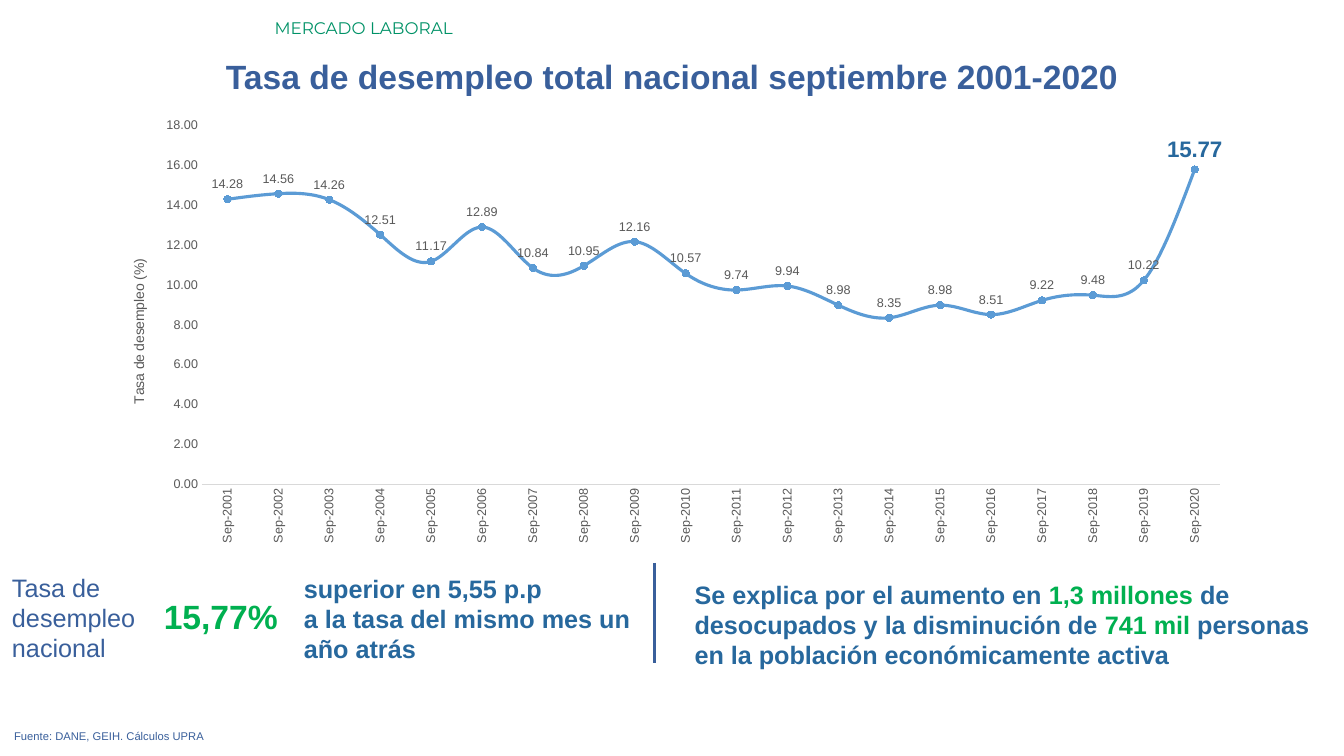
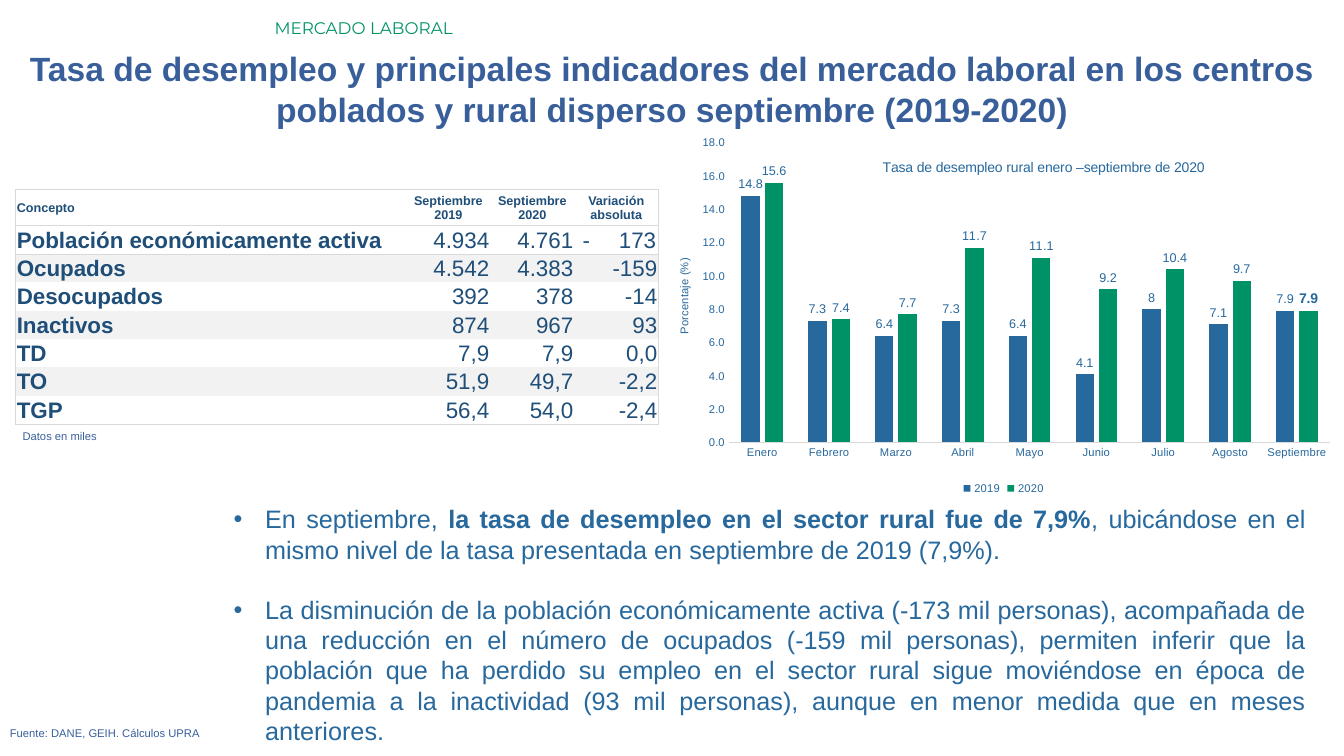
from dataclasses import dataclass
from typing import Optional, Sequence

from lxml.etree import SubElement
from pptx import Presentation
from pptx.chart.data import CategoryChartData
from pptx.dml.color import RGBColor
from pptx.enum.chart import (XL_CHART_TYPE, XL_LABEL_POSITION, XL_LEGEND_POSITION,
                             XL_MARKER_STYLE, XL_TICK_MARK)
from pptx.enum.shapes import MSO_CONNECTOR
from pptx.enum.text import MSO_ANCHOR, MSO_AUTO_SIZE, PP_ALIGN
from pptx.oxml.ns import qn
from pptx.util import Pt

EMU_PER_PX = 9525


def px(length: int) -> int:
    return length * EMU_PER_PX


@dataclass(frozen=True)
class Theme:
    font: str = "Arial"
    kicker_font: str = "Montserrat"
    navy: str = "395F9B"
    blue: str = "27689D"
    line_blue: str = "5B9BD5"
    table_blue: str = "1F4E78"
    teal: str = "009267"
    green: str = "00B050"
    gray: str = "595959"
    rule: str = "D9D9D9"
    stripe: str = "F2F2F2"
    white: str = "FFFFFF"
    title: int = 24
    body: int = 18
    cell: int = 16
    kicker: int = 12
    axis_title: int = 10
    label: int = 9
    small: int = 8


THEME = Theme()


@dataclass(frozen=True)
class Box:
    left: int
    top: int
    width: int
    height: int

    def emu(self) -> tuple:
        return tuple(px(side) for side in (self.left, self.top, self.width, self.height))


@dataclass(frozen=True)
class Span:
    """A piece of a paragraph; what is None follows the paragraph."""
    text: str
    color: Optional[str] = None
    bold: Optional[bool] = None


@dataclass(frozen=True)
class AxisTitle:
    text: str
    size: int
    position: tuple


@dataclass(frozen=True)
class ChartStyle:
    kind: XL_CHART_TYPE
    box: Box
    plot: tuple
    color: str
    value_format: str
    category_size: int
    axis_title: AxisTitle


def rgb(color: str) -> RGBColor:
    return RGBColor.from_string(color)


def style_font(font, size: int, color: str, bold: bool = False, name: str = THEME.font) -> None:
    font.name, font.size, font.bold = name, Pt(size), bold
    font.color.rgb = rgb(color)


def add_text(frame, text, *, size: int, color: str, bold: bool = False, name: str = THEME.font,
             align: PP_ALIGN = PP_ALIGN.LEFT, space_before: float = 0,
             bullet_indent: int = 0, tabs: Sequence = ()) -> None:
    """Add one paragraph, from a string or a list of spans, to a text frame."""
    first = frame.paragraphs[0]
    paragraph = frame.add_paragraph() if first.runs else first
    paragraph.alignment = align
    if space_before:
        paragraph.space_before = Pt(space_before)
    properties = paragraph._p.get_or_add_pPr()
    if bullet_indent:
        properties.set("marL", str(px(bullet_indent)))
        properties.set("indent", str(-px(bullet_indent)))
        SubElement(properties, qn("a:buFont"), typeface=THEME.font)
        SubElement(properties, qn("a:buChar"), char="•")
    if tabs:
        tab_list = SubElement(properties, qn("a:tabLst"))
        for position, side in tabs:
            SubElement(tab_list, qn("a:tab"), pos=str(px(position)), algn=side)
    for span in [Span(text)] if isinstance(text, str) else text:
        run = paragraph.add_run()
        run.text = span.text
        style_font(run.font, size, span.color or color,
                   bold if span.bold is None else span.bold, name)


def fit_frame(frame) -> None:
    frame.word_wrap = True
    frame.auto_size = MSO_AUTO_SIZE.SHAPE_TO_FIT_TEXT
    frame.vertical_anchor = MSO_ANCHOR.TOP


def add_box(slide, box: Box, *paragraphs, **text_format) -> None:
    frame = slide.shapes.add_textbox(*box.emu()).text_frame
    fit_frame(frame)
    for text in paragraphs:
        add_text(frame, text, **text_format)


def add_slide(presentation, title: str, title_box: Box, source_box: Box):
    """Add a slide with its section name, title and source line."""
    slide = presentation.slides.add_slide(presentation.slide_layouts[5])
    shape = slide.shapes.title
    shape.left, shape.top, shape.width, shape.height = title_box.emu()
    fit_frame(shape.text_frame)
    add_text(shape.text_frame, title, size=THEME.title, color=THEME.navy, bold=True,
             align=PP_ALIGN.CENTER)
    add_box(slide, Box(252, 12, 1028, 29), "MERCADO LABORAL", size=THEME.kicker,
            color=THEME.teal, name=THEME.kicker_font)
    add_box(slide, source_box, "Fuente: DANE, GEIH. Cálculos UPRA", size=THEME.small,
            color=THEME.navy, align=PP_ALIGN.JUSTIFY)
    return slide


def set_layout(parent, fractions: tuple) -> None:
    """Place a chart title (x, y) or the inner plot (x, y, w, h)."""
    layout = parent.find(qn("c:layout"))
    if layout is None:
        layout = parent.makeelement(qn("c:layout"))
        parent.insert(0 if parent.find(qn("c:tx")) is None else 1, layout)
    manual = SubElement(layout, qn("c:manualLayout"))
    if len(fractions) == 4:
        SubElement(manual, qn("c:layoutTarget"), val="inner")
    for mode in ("xMode", "yMode"):
        SubElement(manual, qn(f"c:{mode}"), val="edge")
    for side, fraction in zip("xywh", fractions):
        SubElement(manual, qn(f"c:{side}"), val=str(fraction))


def turn_text(parent) -> None:
    body = parent.find(".//" + qn("a:bodyPr"))
    body.set("rot", "-5400000")
    body.set("vert", "horz")


def add_chart(slide, style: ChartStyle, categories: Sequence, series: dict, number_format: str):
    data = CategoryChartData(number_format=number_format)
    data.categories = categories
    for name, values in series.items():
        data.add_series(name, values)
    chart = slide.shapes.add_chart(style.kind, *style.box.emu(), data).chart
    chart.has_title = chart.has_legend = False
    style_font(chart.font, style.category_size, style.color)
    set_layout(chart._element.find(".//" + qn("c:plotArea")), style.plot)
    for axis in (chart.category_axis, chart.value_axis):
        axis.major_tick_mark = axis.minor_tick_mark = XL_TICK_MARK.NONE
        axis.has_major_gridlines = False
        style_font(axis.tick_labels.font, style.category_size, style.color)
    chart.category_axis.format.line.color.rgb = rgb(THEME.rule)
    chart.category_axis.format.line.width = Pt(0.75)
    axis = chart.value_axis
    axis.minimum_scale, axis.maximum_scale, axis.major_unit = 0, 18, 2
    axis.format.line.fill.background()
    axis.tick_labels.number_format = style.value_format
    axis.tick_labels.number_format_is_linked = False
    add_text(axis.axis_title.text_frame, style.axis_title.text, size=style.axis_title.size,
             color=style.color, align=PP_ALIGN.CENTER)
    set_layout(axis.axis_title._element, style.axis_title.position)
    turn_text(axis.axis_title._element)
    chart.plots[0].vary_by_categories = False
    return chart


def label_series(series, position, color: str, number_format: str, last_size: int) -> None:
    """Show all values and stress the last one."""
    labels = series.data_labels
    labels.show_value, labels.position = True, position
    labels.number_format, labels.number_format_is_linked = number_format, False
    style_font(labels.font, THEME.label, color)
    if last_size:
        last = series.points[len(series.values) - 1].data_label
        style_font(last.font, last_size, THEME.blue, bold=True)
        last.position = position


def set_borders(cell, sides: str) -> None:
    """Rule the given sides (of L, R, T, B) and clear the others."""
    properties = cell._tc.get_or_add_tcPr()
    for side in "LRTB":
        line = SubElement(properties, qn(f"a:ln{side}"), w=str(Pt(0.5)))
        if side in sides:
            fill = SubElement(line, qn("a:solidFill"))
            SubElement(fill, qn("a:srgbClr"), val=THEME.rule)
        else:
            SubElement(line, qn("a:noFill"))


def add_indicator_table(slide, rows: Sequence) -> None:
    table = slide.shapes.add_table(len(rows), 4, *Box(15, 180, 612, 224).emu()).table
    table.first_row = table.horz_banding = False
    for index, column in enumerate(table.columns):
        column.width = px(80 if index else 372)
    last_row, last_column = len(rows) - 1, 3
    for row_index, values in enumerate(rows):
        header = row_index == 0
        table.rows[row_index].height = px(35 if header else 27)
        for column_index, value in enumerate(values):
            cell = table.cell(row_index, column_index)
            cell.margin_left = cell.margin_right = cell.margin_top = px(1)
            cell.margin_bottom = 0
            cell.vertical_anchor = MSO_ANCHOR.MIDDLE
            set_borders(cell, "".join(side for side, ruled in (
                ("L", column_index == 0), ("R", column_index == last_column),
                ("T", row_index <= 2), ("B", row_index in (0, 1, last_row))) if ruled))
            cell.fill.solid()
            striped = row_index and row_index % 2 == 0
            cell.fill.fore_color.rgb = rgb(THEME.stripe if striped else THEME.white)
            tabbed = "\t" in value
            align = PP_ALIGN.CENTER if header else PP_ALIGN.RIGHT
            add_text(cell.text_frame, value, size=THEME.label if header else THEME.cell,
                     color=THEME.table_blue, bold=header or column_index == 0,
                     align=PP_ALIGN.LEFT if tabbed or column_index == 0 else align,
                     tabs=((7, "l"), (77, "r")) if tabbed else ())


def add_national_slide(presentation) -> None:
    slide = add_slide(presentation, "Tasa de desempleo total nacional septiembre 2001-2020",
                      Box(0, 48, 1280, 48), Box(4, 690, 1239, 23))
    add_box(slide, Box(2, 540, 213, 97), "Tasa de desempleo nacional",
            size=THEME.body, color=THEME.navy)
    add_box(slide, Box(125, 563, 149, 48), "15,77%", size=THEME.title, color=THEME.green,
            bold=True, align=PP_ALIGN.RIGHT)
    add_box(slide, Box(280, 541, 348, 97), "superior en 5,55 p.p",
            "a la tasa del mismo mes un año atrás", size=THEME.body, color=THEME.blue, bold=True)
    add_box(slide, Box(652, 547, 612, 97),
            [Span("Se explica por el aumento en "), Span("1,3 millones ", THEME.green),
             Span("de desocupados y la disminución de "), Span("741 mil", THEME.green),
             Span(" personas en la población económicamente activa")],
            size=THEME.body, color=THEME.blue, bold=True)
    divider = slide.shapes.add_connector(MSO_CONNECTOR.STRAIGHT, px(623), px(536), px(623), px(631))
    divider.line.color.rgb = rgb(THEME.navy)
    divider.line.width = Pt(2.25)
    SubElement(divider._element.spPr, qn("a:effectLst"))

    style = ChartStyle(XL_CHART_TYPE.LINE_MARKERS, Box(116, 112, 1061, 427),
                       (0.072, 0.016, 0.914, 0.803), THEME.gray, "0.00", THEME.label,
                       AxisTitle("Tasa de desempleo (%)", THEME.axis_title, (0.005, 0.31)))
    rates = (14.28, 14.56, 14.26, 12.51, 11.17, 12.89, 10.84, 10.95, 12.16, 10.57,
             9.74, 9.94, 8.98, 8.35, 8.98, 8.51, 9.22, 9.48, 10.22, 15.77)
    chart = add_chart(slide, style, [f"Sep-{year}" for year in range(2001, 2021)],
                      {"Tasa de desempleo": rates}, "0.00")
    turn_text(chart.category_axis._element.find(qn("c:txPr")))
    line = chart.plots[0].series[0]
    line.smooth = True
    line.format.line.color.rgb = rgb(THEME.line_blue)
    line.format.line.width = Pt(2.25)
    line.marker.style, line.marker.size = XL_MARKER_STYLE.CIRCLE, 5
    line.marker.format.fill.solid()
    line.marker.format.fill.fore_color.rgb = rgb(THEME.line_blue)
    line.marker.format.line.color.rgb = rgb(THEME.line_blue)
    label_series(line, XL_LABEL_POSITION.ABOVE, THEME.gray, "#,##0.00", THEME.cell)


def add_rural_slide(presentation) -> None:
    slide = add_slide(presentation, "Tasa de desempleo y principales indicadores del mercado "
                      "laboral en los centros poblados y rural disperso septiembre (2019-2020)",
                      Box(0, 41, 1280, 87), Box(0, 687, 1239, 23))
    frame = slide.shapes.add_textbox(*Box(213, 475, 1040, 242).emu()).text_frame
    fit_frame(frame)
    findings = (
        [Span("En septiembre, "),
         Span("la tasa de desempleo en el sector rural fue de 7,9%", bold=True),
         Span(", ubicándose en el mismo nivel de la tasa presentada en septiembre de 2019 (7,9%).")],
        "La disminución de la población económicamente activa (-173 mil personas), acompañada de "
        "una reducción en el número de ocupados (-159 mil personas), permiten inferir que la "
        "población que ha perdido su empleo en el sector rural sigue moviéndose en época de "
        "pandemia a la inactividad (93 mil personas), aunque en menor medida que en meses "
        "anteriores.")
    for index, finding in enumerate(findings):
        add_text(frame, finding, size=THEME.body, color=THEME.blue, align=PP_ALIGN.JUSTIFY,
                 bullet_indent=30, space_before=21.5 * index)
    add_box(slide, Box(12, 404, 600, 23), "Datos en miles", size=THEME.small,
            color=THEME.navy, align=PP_ALIGN.JUSTIFY)
    add_indicator_table(slide, (
        ("Concepto", "Septiembre 2019", "Septiembre 2020", "Variación absoluta"),
        ("Población económicamente activa", "4.934", "4.761", "\t-\t173"),
        ("Ocupados", "4.542", "4.383", "-159"),
        ("Desocupados", "392", "378", "-14"),
        ("Inactivos", "874", "967", "93"),
        ("TD", "7,9", "7,9", "0,0"),
        ("TO", "51,9", "49,7", "-2,2"),
        ("TGP", "56,4", "54,0", "-2,4")))

    style = ChartStyle(XL_CHART_TYPE.COLUMN_CLUSTERED, Box(636, 108, 640, 367),
                       (0.091, 0.076, 0.895, 0.778), THEME.blue, "#,##0.0", THEME.small,
                       AxisTitle("Porcentaje (%)", THEME.small, (0.01, 0.37)))
    months = ("Enero", "Febrero", "Marzo", "Abril", "Mayo", "Junio", "Julio", "Agosto",
              "Septiembre")
    chart = add_chart(slide, style, months, {
        "2019": (14.8, 7.3, 6.4, 7.3, 6.4, 4.1, 8, 7.1, 7.9),
        "2020": (15.6, 7.4, 7.7, 11.7, 11.1, 9.2, 10.4, 9.7, 7.9)}, "General")
    chart.has_title = True
    add_text(chart.chart_title.text_frame, "Tasa de desempleo rural enero –septiembre de 2020",
             size=THEME.axis_title, color=THEME.blue, align=PP_ALIGN.CENTER)
    set_layout(chart.chart_title._element, (0.316, 0.11))
    chart.has_legend = True
    chart.legend.position = XL_LEGEND_POSITION.BOTTOM
    chart.legend.include_in_layout = False
    style_font(chart.legend.font, THEME.small, THEME.blue)
    plot = chart.plots[0]
    plot.gap_width, plot.overlap = 136, -27
    for series, color, last_size in zip(plot.series, (THEME.blue, THEME.teal),
                                        (0, THEME.axis_title)):
        series.format.fill.solid()
        series.format.fill.fore_color.rgb = rgb(color)
        label_series(series, XL_LABEL_POSITION.OUTSIDE_END, THEME.blue, "General", last_size)


def main() -> None:
    presentation = Presentation()
    presentation.slide_width, presentation.slide_height = px(1280), px(720)
    add_national_slide(presentation)
    add_rural_slide(presentation)
    presentation.save("out.pptx")


if __name__ == "__main__":
    main()
